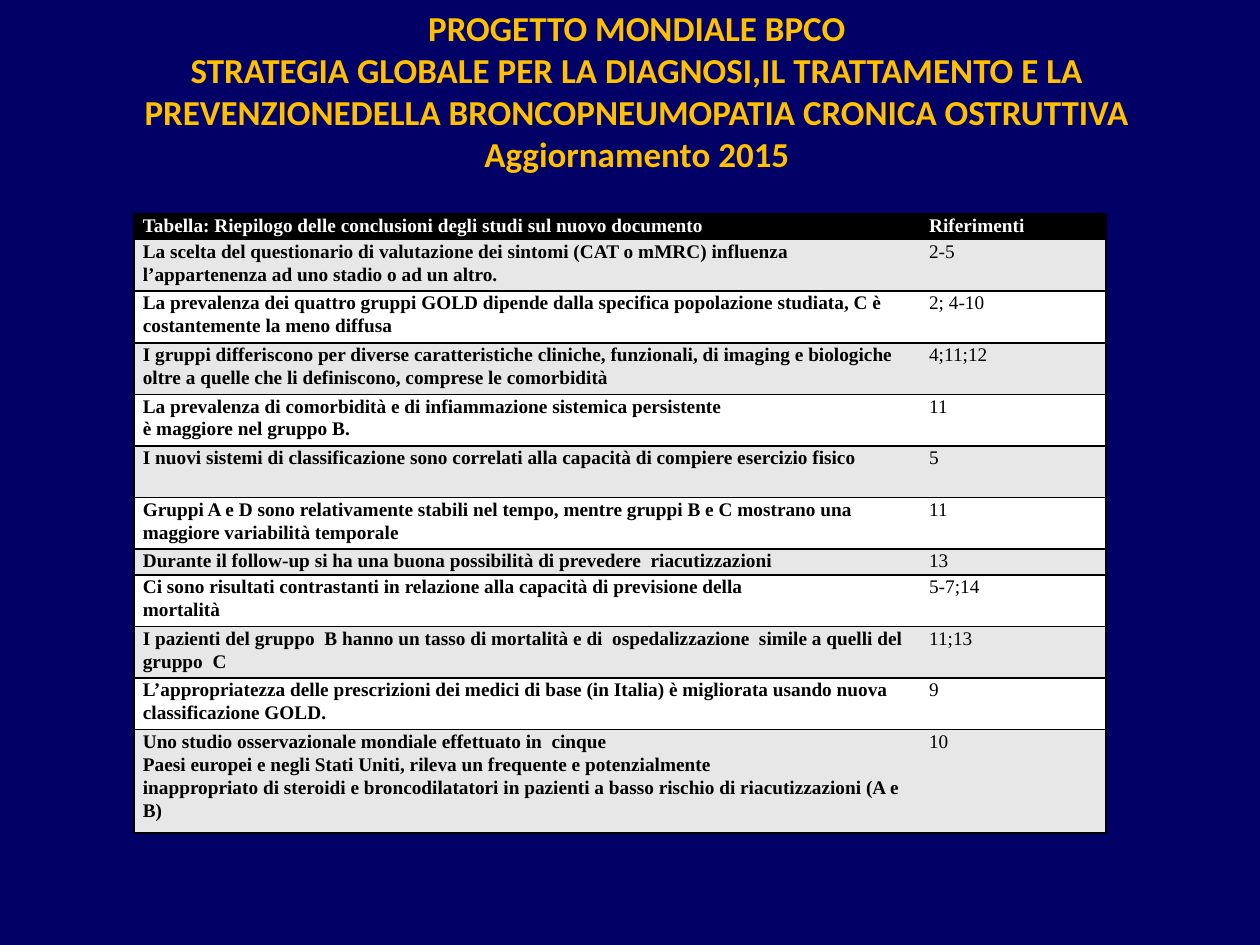
import pptx
import pptx.util
import pptx.dml.color
import pptx.enum.text
import pptx.oxml
import pptx.oxml.ns
from pptx.util import Cm, Pt


def rgb(hex_color):
    return pptx.dml.color.RGBColor.from_string(hex_color)


def add_text(p, text, font, size, color, bold):
    for i, line in enumerate(text.split("\n")):
        if i:
            p.add_line_break()
        r = p.add_run()
        r.text = line
        r.font.name, r.font.size, r.font.bold = font, Pt(size), bold
        r.font.color.rgb = rgb(color)


rows = [
    ("Tabella: Riepilogo delle conclusioni degli studi sul nuovo documento", "Riferimenti"),
    ("La scelta del questionario di valutazione dei sintomi (CAT o mMRC) influenza "
     "l’appartenenza ad uno stadio o ad un altro.", "2-5"),
    ("La prevalenza dei quattro gruppi GOLD dipende dalla specifica popolazione studiata, "
     "C è costantemente la meno diffusa", "2; 4-10"),
    ("I gruppi differiscono per diverse caratteristiche cliniche, funzionali, di imaging e "
     "biologiche oltre a quelle che li definiscono, comprese le comorbidità", "4;11;12"),
    ("La prevalenza di comorbidità e di infiammazione sistemica persistente\n"
     "è maggiore nel gruppo B.", "11"),
    ("I nuovi sistemi di classificazione sono correlati alla capacità di compiere "
     "esercizio fisico", "5"),
    ("Gruppi A e D sono relativamente stabili nel tempo, mentre gruppi B e C mostrano una "
     "maggiore variabilità temporale", "11"),
    ("Durante il follow-up si ha una buona possibilità di prevedere  riacutizzazioni", "13"),
    ("Ci sono risultati contrastanti in relazione alla capacità di previsione della\n"
     "mortalità", "5-7;14"),
    ("I pazienti del gruppo  B hanno un tasso di mortalità e di  ospedalizzazione  simile a "
     "quelli del gruppo  C", "11;13"),
    ("L’appropriatezza delle prescrizioni dei medici di base (in Italia) è migliorata usando "
     "nuova classificazione GOLD.", "9"),
    ("Uno studio osservazionale mondiale effettuato in  cinque \n"
     "Paesi europei e negli Stati Uniti, rileva un frequente e potenzialmente\n"
     "inappropriato di steroidi e broncodilatatori in pazienti a basso rischio di "
     "riacutizzazioni (A e B)", "10"),
]
line_counts = [1, 2, 2, 2, 2, 2, 2, 1, 2, 2, 2, 4]

prs = pptx.Presentation()
prs.slide_width, prs.slide_height = Cm(25.4), Cm(19.05)
s = prs.slides.add_slide(prs.slide_layouts[5])
s.background.fill.solid()
s.background.fill.fore_color.rgb = rgb("000066")

# Title
sp = s.shapes.title
sp.left, sp.top, sp.width, sp.height = Cm(1.19), Cm(0), Cm(23.3), Cm(3.13)
tf = sp.text_frame
tf.word_wrap = True
tf.auto_size = pptx.enum.text.MSO_AUTO_SIZE.NONE
tf.vertical_anchor = pptx.enum.text.MSO_ANCHOR.TOP
p = tf.paragraphs[0]
p.alignment = pptx.enum.text.PP_ALIGN.CENTER
add_text(p, "PROGETTO MONDIALE BPCO\n"
            "STRATEGIA GLOBALE PER LA DIAGNOSI,IL TRATTAMENTO E LA "
            "PREVENZIONEDELLA BRONCOPNEUMOPATIA CRONICA OSTRUTTIVA\n"
            "Aggiornamento 2015", "Calibri", 20, "FFC000", True)

# Table
line_height = Cm(0.52)
table = s.shapes.add_table(len(rows), 2, Cm(2.7), Cm(4.31), Cm(19.6),
                           line_height * sum(line_counts)).table
table.columns[0].width, table.columns[1].width = Cm(15.85), Cm(3.75)

for i, row in enumerate(rows):
    table.rows[i].height = line_height * line_counts[i]
    fill = "000000" if i == 0 else "E7E7E7" if i % 2 else "FFFFFF"
    for j, text in enumerate(row):
        cell = table.cell(i, j)
        cell.margin_left = cell.margin_right = Cm(0.18)
        cell.margin_top = cell.margin_bottom = 0
        cell.fill.solid()
        cell.fill.fore_color.rgb = rgb(fill)
        p = cell.text_frame.paragraphs[0]
        p.alignment = pptx.enum.text.PP_ALIGN.LEFT
        p.line_spacing = 1.07
        add_text(p, text, "Times New Roman", 11, "000000" if i else "FFFFFF",
                 i == 0 or j == 0)

        # Black borders, none between the two columns
        tcPr = cell._tc.get_or_add_tcPr()
        for k, side in enumerate("LRTB"):
            inner = side == "RL"[j]
            paint = "<a:noFill/>" if inner else (
                '<a:solidFill><a:srgbClr val="000000"/></a:solidFill>')
            tcPr.insert(k, pptx.oxml.parse_xml(
                f'<a:ln{side} {pptx.oxml.ns.nsdecls("a")} w="{Pt(1)}">{paint}</a:ln{side}>'))

prs.save("out.pptx")
